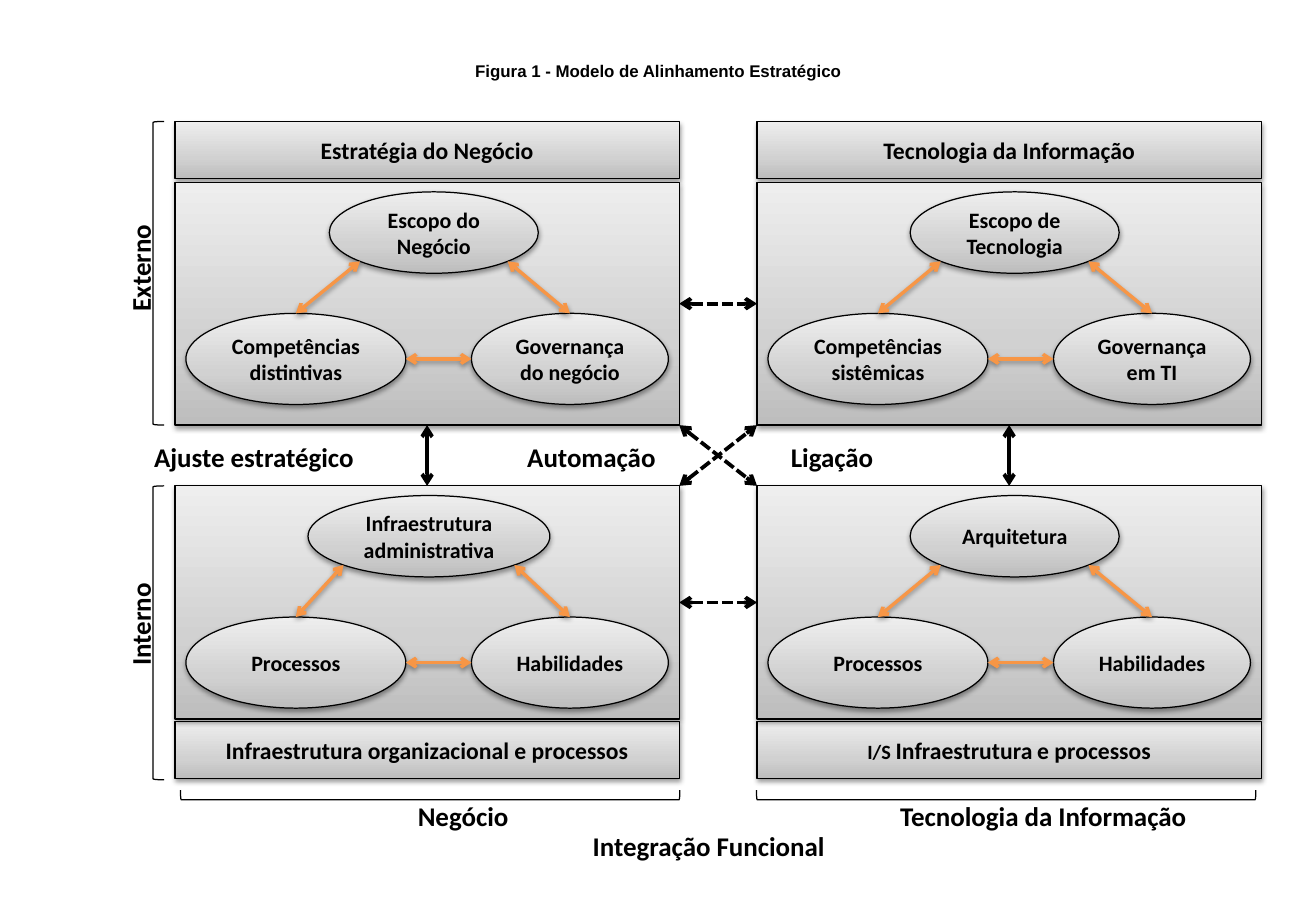
from math import sqrt
from lxml.etree import SubElement
from pptx import Presentation
from pptx.dml.color import RGBColor
from pptx.enum.dml import MSO_LINE
from pptx.enum.shapes import MSO_CONNECTOR, MSO_SHAPE
from pptx.enum.text import MSO_ANCHOR, PP_ALIGN
from pptx.oxml import parse_xml
from pptx.oxml.ns import nsdecls, qn
from pptx.util import Inches, Pt

TITLE = "Figura 1 - Modelo de Alinhamento Estratégico"
HEADS = [
    (0, 1, [("Estratégia do Negócio", 14)]),
    (1, 1, [("Tecnologia da Informação", 14)]),
    (0, 5.94, [("Infraestrutura organizacional e processos", 14)]),
    (1, 5.94, [("I/S ", 12), ("Infraestrutura", 14), (" ", 12), ("e processos", 14)]),
]
QUADS = [
    (0, 0, 2.13, 1.72, ("Escopo do Negócio", "Competências distintivas", "Governança do negócio")),
    (1, 0, 2.12, 1.72, ("Escopo de Tecnologia", "Competências sistêmicas", "Governança em TI")),
    (0, 1, 2.09, 1.99, ("Infraestrutura administrativa", "Processos", "Habilidades")),
    (1, 1, 2.12, 1.72, ("Arquitetura", "Processos", "Habilidades")),
]
LABELS = [
    ("Ajuste estratégico", 1.17, 3.58, 2.44, 0),
    ("Automação", 4.24, 3.58, 1.62, 0),
    ("Ligação", 6.41, 3.58, 1.53, 0),
    ("Externo", 0.49, 1.81, 1.33, 270),
    ("Interno", 0.49, 4.73, 1.33, 270),
    ("Negócio", 3.34, 6.53, 1.44, 0),
    ("Tecnologia da Informação", 7.31, 6.53, 2.98, 0),
    ("Integração Funcional", 4.78, 6.78, 2.8, 0),
]
BRACES = [
    (1.26, 1, 0.09, 2.5, 0),
    (1.26, 4, 0.09, 2.42, 0),
    (3.5, 4.49, 0.08, 4.11, 270),
    (8.24, 4.49, 0.08, 4.11, 270),
]
BLACK = RGBColor(0, 0, 0)
ORANGE = RGBColor(0xF7, 0x96, 0x46)
SHADES = [(0, RGBColor(0xBD, 0xBD, 0xBD)), (35, RGBColor(0xD1, 0xD1, 0xD1)),
          (100, RGBColor(0xEE, 0xEE, 0xEE))]

WIDE, HIGH = 10.83, 7.5
COLS, ROWS, TALL = (1.44, 6.23), (1.5, 4), (2, 1.92)
SPAN, HEAD = 4.15, 0.47
EDGE = COLS[0] + SPAN

deck = Presentation()
deck.slide_width, deck.slide_height = Inches(WIDE), Inches(HIGH)
slide = deck.slides.add_slide(deck.slide_layouts[5])


def write(shape, runs, size=16, font="Calibri", align=PP_ALIGN.LEFT, anchor=MSO_ANCHOR.TOP, wrap=True):
    frame = shape.text_frame
    frame.word_wrap, frame.vertical_anchor = wrap, anchor
    para = frame.paragraphs[0]
    para.alignment = align
    for text, points in [(runs, size)] if isinstance(runs, str) else runs:
        run = para.add_run()
        run.text = text
        run.font.name, run.font.size, run.font.bold = font, Pt(points), True
        run.font.color.rgb = BLACK


def shade(props):
    for old in props.findall(qn("a:effectLst")):
        props.remove(old)
    props.append(parse_xml(
        f'<a:effectLst {nsdecls("a")}><a:outerShdw blurRad="{Pt(3.1)}" dist="{Pt(1.6)}" '
        'dir="5400000" rotWithShape="0"><a:srgbClr val="000000"><a:alpha val="38000"/>'
        '</a:srgbClr></a:outerShdw></a:effectLst>'))


def draw(kind, x, y, w, h, turn=0):
    shape = slide.shapes.add_shape(kind, Inches(x), Inches(y), Inches(w), Inches(h))
    shape.rotation = turn
    shape.shadow.inherit = False
    shape.line.color.rgb, shape.line.width = BLACK, Pt(0.75)
    shape.fill.background()
    return shape


def block(kind, x, y, w, h, runs="", size=13):
    shape = draw(kind, x, y, w, h)
    shape.fill.gradient()
    shape.fill.gradient_angle = 90
    grad = shape._element.spPr.find(qn("a:gradFill"))
    stops = grad.find(qn("a:gsLst"))
    for old in list(stops):
        stops.remove(old)
    for place, tone in SHADES:
        stop = SubElement(stops, qn("a:gs"), pos=str(place * 1000))
        SubElement(stop, qn("a:srgbClr"), val=str(tone))
    grad.find(qn("a:lin")).set("ang", "16200000")
    shade(shape._element.spPr)
    if runs:
        write(shape, runs, size=size, align=PP_ALIGN.CENTER, anchor=MSO_ANCHOR.MIDDLE)


def arrow(x1, y1, x2, y2, tone=BLACK, width=2.25, dash=False):
    link = slide.shapes.add_connector(
        MSO_CONNECTOR.STRAIGHT, Inches(x1), Inches(y1), Inches(x2), Inches(y2))
    link.line.color.rgb, link.line.width = tone, Pt(width)
    if dash:
        link.line.dash_style = MSO_LINE.SQUARE_DOT
    props = link._element.spPr
    for end in ("a:headEnd", "a:tailEnd"):
        SubElement(props.find(qn("a:ln")), qn(end), type="arrow")
    if tone == ORANGE:
        shade(props)
    else:
        SubElement(props, qn("a:effectLst"))


def quad(col, row, mid, wide, names):
    x, y = COLS[col], ROWS[row]
    block(MSO_SHAPE.RECTANGLE, x, y, SPAN, TALL[row])
    top, left, right = ovals = [
        (x + mid - wide / 2, y + 0.08, wide, 0.67),
        (x + 0.09, y + 1.08, 1.81, 0.75),
        (x + 2.44, y + 1.08, 1.62, 0.75),
    ]
    for spot, name in zip(ovals, names):
        block(MSO_SHAPE.OVAL, *spot, name)
    low = top[1] + top[3] / 2 * (1 + 1 / sqrt(2))
    for side, foot in ((-1, left), (1, right)):
        arrow(x + mid + side * wide / 2 / sqrt(2), low,
              foot[0] + foot[2] / 2, foot[1], tone=ORANGE, width=2)
    level = left[1] + left[3] / 2
    arrow(right[0], level, left[0] + left[2], level, tone=ORANGE, width=2)


title = slide.shapes.title
title.left, title.top, title.width, title.height = 0, Inches(0.33), Inches(WIDE), Inches(0.5)
write(title, TITLE, size=10, font="Arial", align=PP_ALIGN.CENTER, anchor=MSO_ANCHOR.MIDDLE, wrap=False)

for col, y, runs in HEADS:
    block(MSO_SHAPE.RECTANGLE, COLS[col], y, SPAN, HEAD, runs)
for part in QUADS:
    quad(*part)

low, high = ROWS[0] + TALL[0], ROWS[1]
for start, stop in ((low, high), (high, low), (2.5, 2.5), (4.96, 4.96)):
    arrow(EDGE, start, COLS[1], stop, dash=True)
for x in COLS:
    arrow(x + SPAN / 2, low, x + SPAN / 2, high)

for spot in BRACES:
    draw(MSO_SHAPE.LEFT_BRACKET, *spot)
for text, x, y, w, turn in LABELS:
    box = slide.shapes.add_textbox(Inches(x), Inches(y), Inches(w), Inches(0.37))
    box.rotation = turn
    write(box, text)

deck.save("out.pptx")
